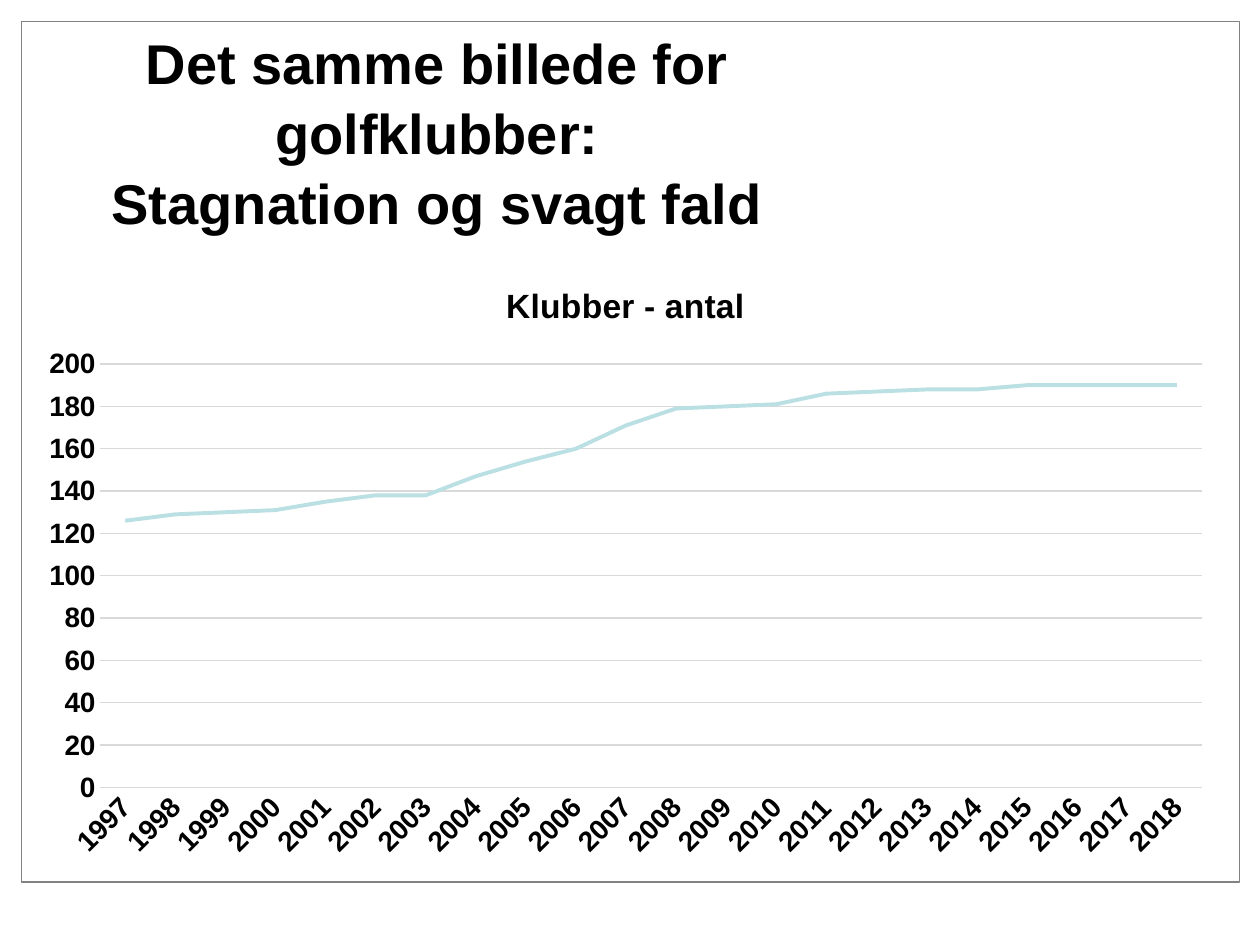
from pptx import Presentation
from pptx.chart.data import CategoryChartData
from pptx.dml.color import RGBColor
from pptx.enum.chart import XL_CHART_TYPE, XL_TICK_MARK
from pptx.enum.shapes import MSO_SHAPE
from pptx.enum.text import MSO_ANCHOR, PP_ALIGN
from pptx.util import Inches, Pt

BLACK = RGBColor(0x00, 0x00, 0x00)
FRAME_GRAY = RGBColor(0x82, 0x82, 0x82)
GRID_GRAY = RGBColor(0xD9, 0xD9, 0xD9)
PALE_BLUE = RGBColor(0xBB, 0xE0, 0xE3)

HEADING = "Det samme billede for golfklubber:\vStagnation og svagt fald"
CHART_TITLE = "Klubber - antal"
FIRST_YEAR = 1997
CLUBS = [126, 129, 130, 131, 135, 138, 138, 147, 154, 160, 171,
         179, 180, 181, 186, 187, 188, 188, 190, 190, 190, 190]


def set_font(font, size):
    font.name = "Arial"
    font.size = Pt(size)
    font.bold = True
    font.color.rgb = BLACK


def set_line(line, color, width):
    line.color.rgb = color
    line.width = Pt(width)


def add_frame(page):
    frame = page.shapes.add_shape(
        MSO_SHAPE.RECTANGLE, Inches(0.17), Inches(0.17), Inches(9.67), Inches(6.83))
    frame.shadow.inherit = False
    frame.fill.background()
    set_line(frame.line, FRAME_GRAY, 0.75)


def add_heading(page):
    box = page.shapes.add_textbox(Inches(0.2), Inches(0.21), Inches(6.54), Inches(1.66))
    text = box.text_frame
    text.word_wrap = True
    text.vertical_anchor = MSO_ANCHOR.MIDDLE
    para = text.paragraphs[0]
    para.text = HEADING
    para.alignment = PP_ALIGN.CENTER
    para.line_spacing = 1.04
    set_font(para.font, 32)


def add_club_chart(page):
    data = CategoryChartData()
    data.categories = [str(FIRST_YEAR + offset) for offset in range(len(CLUBS))]
    data.add_series(CHART_TITLE, CLUBS)
    chart = page.shapes.add_chart(
        XL_CHART_TYPE.LINE, Inches(0.2), Inches(2.05), Inches(9.53), Inches(4.85), data).chart
    set_font(chart.font, 16)
    chart.has_legend = False
    chart.has_title = True
    title = chart.chart_title.text_frame
    title.text = CHART_TITLE
    set_font(title.paragraphs[0].font, 19.2)

    for axis in (chart.category_axis, chart.value_axis):
        axis.major_tick_mark = XL_TICK_MARK.NONE
        axis.minor_tick_mark = XL_TICK_MARK.NONE
        set_font(axis.tick_labels.font, 16)
    set_line(chart.category_axis.format.line, GRID_GRAY, 0.75)
    values = chart.value_axis
    values.minimum_scale, values.maximum_scale, values.major_unit = 0, 200, 20
    values.format.line.fill.background()
    values.has_major_gridlines = True
    set_line(values.major_gridlines.format.line, GRID_GRAY, 0.75)

    plot = chart.plots[0]
    plot.vary_by_categories = False
    series = plot.series[0]
    series.smooth = False
    set_line(series.format.line, PALE_BLUE, 2.25)


def main():
    deck = Presentation()
    deck.slide_width, deck.slide_height = Inches(10), Inches(7.5)
    page = deck.slides.add_slide(deck.slide_layouts[6])
    add_frame(page)
    add_heading(page)
    add_club_chart(page)
    deck.save("out.pptx")


if __name__ == "__main__":
    main()
